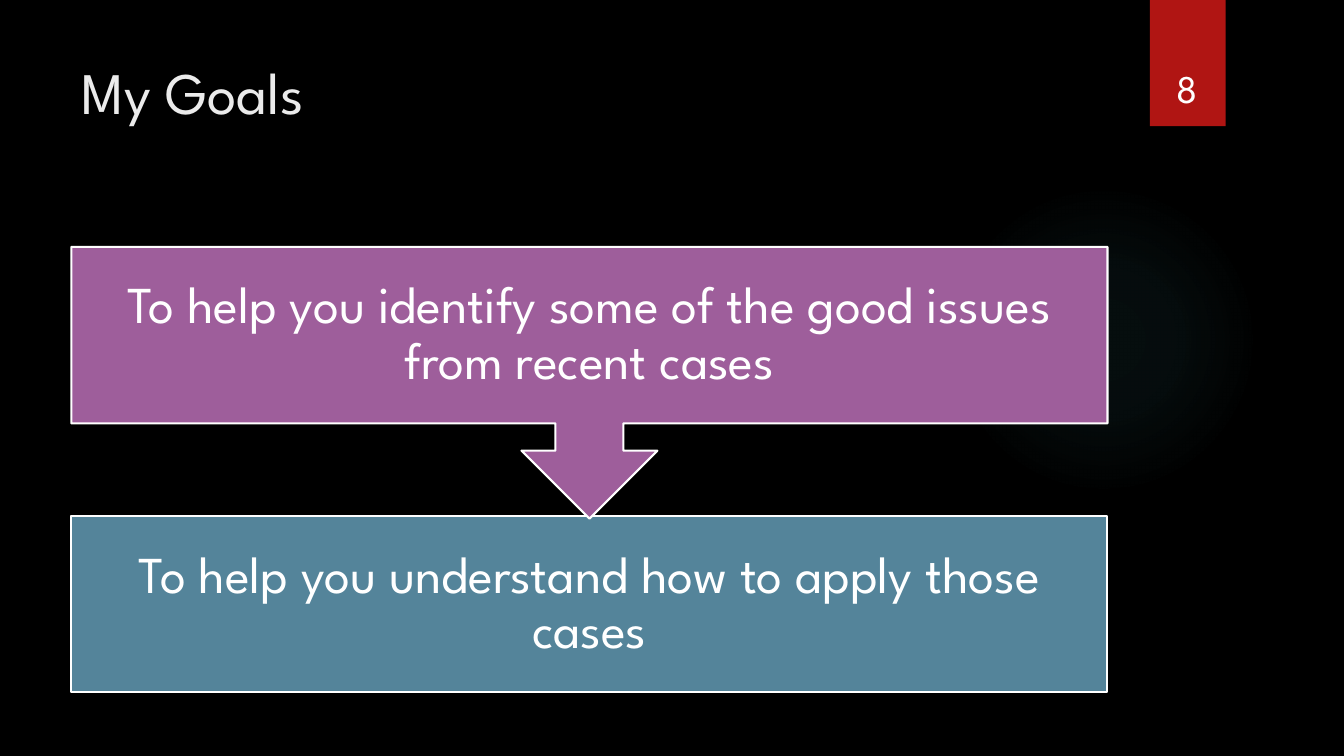
"""Build the "My Goals" slide: two goals joined by an arrow callout."""
from dataclasses import dataclass

from pptx import Presentation
from pptx.dml.color import RGBColor
from pptx.enum.shapes import MSO_SHAPE
from pptx.enum.text import MSO_ANCHOR, PP_ALIGN
from pptx.oxml import parse_xml
from pptx.oxml.ns import nsdecls
from pptx.util import Cm, Pt

TITLE = "My Goals"
PAGE = "8"
GOALS = [
    "To help you identify some of the good issues from recent cases",
    "To help you understand how to apply those cases",
]


@dataclass(frozen=True)
class Theme:
    font: str = "League Spartan"
    background: str = "000000"
    white: str = "FFFFFF"
    title: str = "EBEBEB"
    badge: str = "B01513"
    glow: str = "50B9C1"
    goals: tuple = ("9E5E9B", "54849A")
    title_size: int = 42
    goal_size: int = 37
    page_size: int = 28
    outline: float = 1.5


THEME = Theme()
GLOW_STOPS = [(0, 7), (36, 6), (69, 0)]
LEFT, GOAL_WIDTH = 1.8, 26.11
GOAL_TOP, GOAL_HEIGHT, GOAL_STEP = 6.22, 4.45, 6.78
CALLOUT_HEIGHT = 6.85
GOAL_INSET = 0.74


def color(value):
    return RGBColor.from_string(value)


def add_panel(slide, kind, box, fill, outlined=False):
    panel = slide.shapes.add_shape(kind, *map(Cm, box))
    panel.shadow.inherit = False
    panel.fill.solid()
    panel.fill.fore_color.rgb = color(fill)
    if outlined:
        panel.line.color.rgb = color(THEME.white)
        panel.line.width = Pt(THEME.outline)
    else:
        panel.line.fill.background()
    return panel


def write(shape, text, size, ink, align, anchor):
    frame = shape.text_frame
    frame.word_wrap = True
    frame.vertical_anchor = anchor
    paragraph = frame.paragraphs[0]
    paragraph.alignment = align
    run = paragraph.add_run()
    run.text = text
    run.font.name = THEME.font
    run.font.size = Pt(size)
    run.font.color.rgb = color(ink)
    return frame


def add_glow(slide):
    glow = add_panel(slide, MSO_SHAPE.OVAL, (23.9, 4.65, 7.82, 7.82), THEME.glow)
    stops = "".join(
        f'<a:gs pos="{place * 1000}"><a:srgbClr val="{THEME.glow}">'
        f'<a:alpha val="{alpha * 1000}"/></a:srgbClr></a:gs>'
        for place, alpha in GLOW_STOPS
    )
    gradient = parse_xml(
        f'<a:gradFill {nsdecls("a")}><a:gsLst>{stops}</a:gsLst><a:path path="circle">'
        '<a:fillToRect l="50000" t="50000" r="50000" b="50000"/></a:path></a:gradFill>'
    )
    properties = glow.element.spPr
    properties.replace(properties.find(".//{*}solidFill"), gradient)


def add_goal(slide, index):
    last = index == len(GOALS) - 1
    kind = MSO_SHAPE.RECTANGLE if last else MSO_SHAPE.DOWN_ARROW_CALLOUT
    height = GOAL_HEIGHT if last else CALLOUT_HEIGHT
    box = (LEFT, GOAL_TOP + index * GOAL_STEP, GOAL_WIDTH, height)
    goal = add_panel(slide, kind, box, THEME.goals[index], outlined=True)
    frame = write(goal, GOALS[index], THEME.goal_size, THEME.white,
                  PP_ALIGN.CENTER, MSO_ANCHOR.MIDDLE)
    frame.margin_left = frame.margin_right = Cm(GOAL_INSET)
    frame.margin_top = frame.margin_bottom = Cm(GOAL_INSET)
    frame.paragraphs[0].line_spacing = 0.9


def main():
    deck = Presentation()
    deck.slide_width, deck.slide_height = Cm(33.87), Cm(19.05)
    slide = deck.slides.add_slide(deck.slide_layouts[6])
    slide.background.fill.solid()
    slide.background.fill.fore_color.rgb = color(THEME.background)

    add_glow(slide)
    add_panel(slide, MSO_SHAPE.RECTANGLE, (28.98, 0, 1.91, 3.18), THEME.badge)
    title = slide.shapes.add_textbox(Cm(LEFT), Cm(1.27), Cm(26.14), Cm(3.89))
    write(title, TITLE, THEME.title_size, THEME.title, PP_ALIGN.LEFT, MSO_ANCHOR.TOP)
    for index in reversed(range(len(GOALS))):
        add_goal(slide, index)
    page = slide.shapes.add_textbox(Cm(28.75), Cm(0.81), Cm(2.34), Cm(2.13))
    write(page, PAGE, THEME.page_size, THEME.white, PP_ALIGN.CENTER, MSO_ANCHOR.BOTTOM)

    deck.save("out.pptx")


if __name__ == "__main__":
    main()
